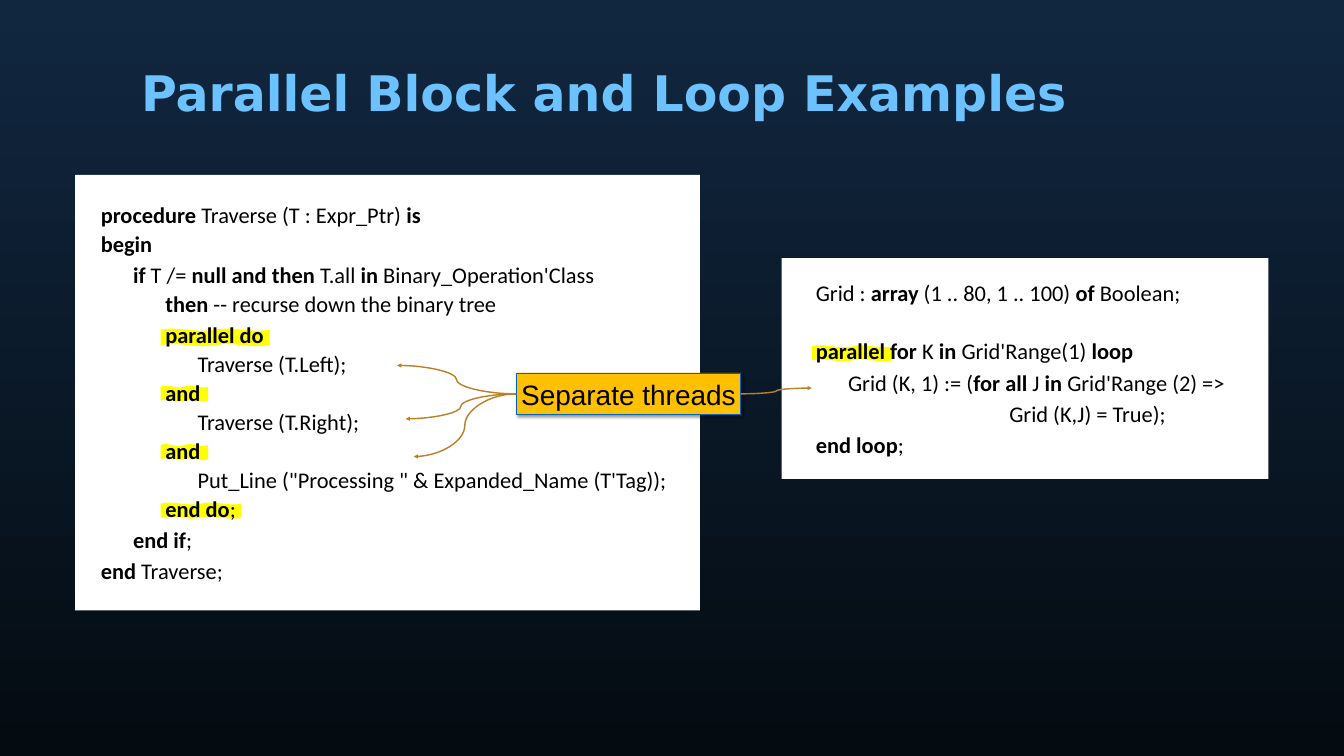
"""Builds a slide with two code panels and a callout that points into both."""
from lxml import etree
from pptx import Presentation
from pptx import util as u
from pptx.dml.color import RGBColor
from pptx.enum import shapes, text
from pptx.oxml import ns

HUES = {
    "top": "112740", "base": "040B11", "title": "6BC2FF", "panel": "FFFFFF",
    "mark": "FFFF00", "code": "000000", "call": "FFC000", "edge": "0065C1",
    "arrow": "BC8027",
}
STEP = 0.64
PAD = 0.08

TREE = [
    (0, 0, "*procedure *Traverse (T : Expr_Ptr) *is*"),
    (0, 3, "*begin*"),
    (1, 6, "*if *T /= *null and then *T.all *in *Binary_Operation'Class"),
    (2, 3, "*then *-- recurse down the binary tree"),
    (2, 6, "*parallel do*"),
    (3, 3, "Traverse (T.Left);"),
    (2, 3, "*and*"),
    (3, 3, "Traverse (T.Right);"),
    (2, 3, "*and*"),
    (3, 3, "Put_Line (\"Processing \" & Expanded_Name (T'Tag));"),
    (2, 3, "*end do*;"),
    (1, 6, "*end if*;"),
    (0, 6, "*end *Traverse;"),
]
GRID = [
    (0, 0, "Grid : *array *(1 .. 80, 1 .. 100) *of *Boolean;"),
    (0, 45, "*parallel for *K *in *Grid'Range(1) *loop*"),
    (1, 6, "Grid (K, 1) := (*for all *J *in *Grid'Range (2) =>"),
    (6, 6, "Grid (K,J) = True);"),
    (0, 6, "*end loop*;"),
]
TREE_MARKS = [(1.7, 3.05, 2.16, 0.35), (1.7, 4.18, 0.94, 0.32),
              (1.7, 5.34, 0.94, 0.32), (1.7, 6.5, 1.6, 0.32)]
GRID_MARKS = [(0.6, 1.73, 1.6, 0.32)]
TIPS = [(7.88, 7.25), (8.05, 8.31), (8.21, 9.06)]


def hue(name):
    """Return the named colour."""
    return RGBColor.from_string(HUES[name])


def inch(*sizes):
    """Turn numbers into inch lengths."""
    return [u.Inches(size) for size in sizes]


def block(home, kind, box, name):
    """Add a plain filled shape."""
    shape = home.shapes.add_shape(kind, *inch(*box))
    shape.shadow.inherit = False
    shape.fill.solid()
    shape.fill.fore_color.rgb = hue(name)
    shape.line.fill.background()
    return shape


def set_frame(frame, pad, wrap=True):
    """Set even margins, middle anchor and wrapping."""
    frame.margin_left = frame.margin_right = u.Inches(pad)
    frame.margin_top = frame.margin_bottom = u.Inches(pad)
    frame.vertical_anchor = text.MSO_ANCHOR.MIDDLE
    frame.word_wrap = wrap


def add_run(para, words, size, face, name, bold=False):
    """Add one formatted run."""
    run = para.add_run()
    run.text = words
    run.font.size = u.Pt(size)
    run.font.name = face
    run.font.bold = bold
    run.font.color.rgb = hue(name)


def add_code(frame, lines):
    """Write indented code lines, where stars switch bold on and off."""
    for row, (level, gap, line) in enumerate(lines):
        para = frame.add_paragraph() if row else frame.paragraphs[0]
        props = para._p.get_or_add_pPr()
        props.set("marL", str(u.Inches(level * STEP)))
        props.set("indent", "0")
        para.space_before = u.Pt(gap)
        for turn, words in enumerate(line.split("*")):
            if words:
                add_run(para, words, 32, "Calibri", "code", turn % 2 == 1)


def add_panel(slide, box, inset, lines, marks):
    """Add a white panel with highlights behind its code."""
    left, top, width, height = box
    side, head = inset
    group = slide.shapes.add_group_shape()
    block(group, shapes.MSO_SHAPE.RECTANGLE, box, "panel")
    for x, y, wide, high in marks:
        block(group, shapes.MSO_SHAPE.DOUBLE_WAVE,
              (left + x, top + y, wide, high), "mark")
    area = (left + side, top + head, width - 2 * side, height - 2 * head)
    label = group.shapes.add_textbox(*inch(*area))
    set_frame(label.text_frame, PAD)
    add_code(label.text_frame, lines)


def add_shade(shape):
    """Give a shape a soft shadow to the lower right."""
    props = shape._element.spPr
    list_ = props.find(ns.qn("a:effectLst"))
    shade = etree.SubElement(list_, ns.qn("a:outerShdw"), blurRad=str(u.Pt(4)),
                             dist=str(u.Pt(3)), dir="2700000", rotWithShape="0")
    color = etree.SubElement(shade, ns.qn("a:srgbClr"), val=HUES["code"])
    etree.SubElement(color, ns.qn("a:alpha"), val="40000")


def add_arrow(slide, start, end):
    """Add a curved arrow."""
    arrow = slide.shapes.add_connector(
        shapes.MSO_CONNECTOR.CURVE, *inch(*start, *end))
    arrow.line.color.rgb = hue("arrow")
    arrow.line.width = u.Pt(2)
    etree.SubElement(arrow.line._get_or_add_ln(), ns.qn("a:tailEnd"),
                     type="triangle")
    etree.SubElement(arrow._element.spPr, ns.qn("a:effectLst"))


def add_call(slide, box, tips, far):
    """Add the callout with arrows to the left tips and the far right tip."""
    left, top, width, height = box
    shape = block(slide, shapes.MSO_SHAPE.RECTANGLE, box, "call")
    shape.line.color.rgb = hue("edge")
    shape.line.width = u.Pt(1)
    add_shade(shape)
    set_frame(shape.text_frame, PAD, False)
    para = shape.text_frame.paragraphs[0]
    para.alignment = text.PP_ALIGN.CENTER
    add_run(para, "Separate threads", 40, "Arial", "code")
    mid = top + height / 2
    for tip in tips:
        add_arrow(slide, (left, mid), tip)
    add_arrow(slide, (left + width, mid), far)


def add_title(slide, box, words):
    """Place and format the title."""
    title = slide.shapes.title
    title.left, title.top, title.width, title.height = inch(*box)
    set_frame(title.text_frame, 0.05)
    para = title.text_frame.paragraphs[0]
    para.alignment = text.PP_ALIGN.LEFT
    para.line_spacing = 1.1
    add_run(para, words, 70, "DejaVu Sans", "title", True)


def set_back(slide):
    """Shade the background from top to base."""
    fill = slide.background.fill
    fill.gradient()
    fill.gradient_angle = 270
    for stop, name in zip(fill.gradient_stops, ("top", "base")):
        stop.color.rgb = hue(name)


def main():
    """Build and save the slide."""
    deck = Presentation()
    deck.slide_width, deck.slide_height = inch(26.67, 15)
    slide = deck.slides.add_slide(deck.slide_layouts[5])
    set_back(slide)
    add_title(slide, (2.75, 0.99, 21.17, 1.57),
              "Parallel Block and Loop Examples")
    add_panel(slide, (1.49, 3.47, 12.4, 8.64), (0.43, 0.38), TREE, TREE_MARKS)
    add_panel(slide, (15.51, 5.12, 9.66, 4.38), (0.6, 0.3), GRID, GRID_MARKS)
    add_call(slide, (10.24, 7.4, 4.46, 0.83), TIPS, (16.11, 7.7))
    deck.save("out.pptx")


if __name__ == "__main__":
    main()
